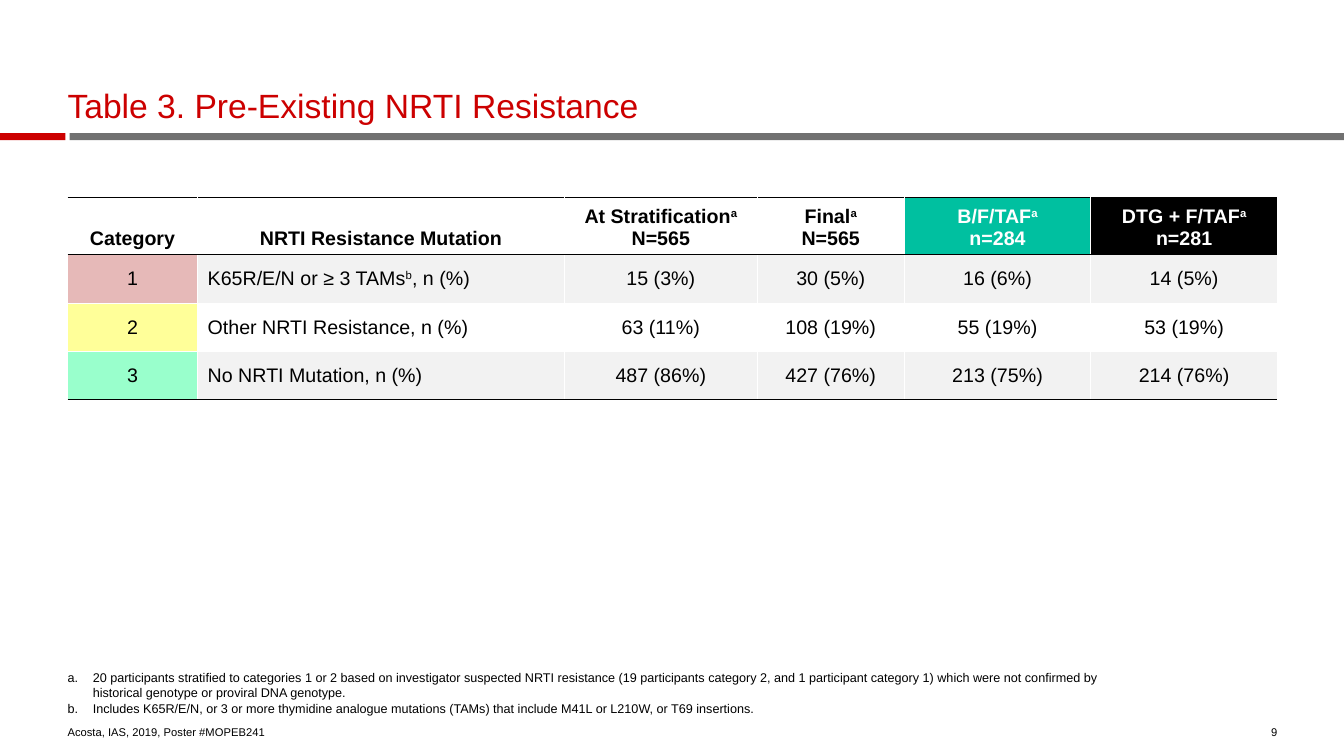
"""Build the slide with the table of pre-existing NRTI resistance."""
from dataclasses import dataclass

from lxml import etree
from pptx import Presentation
from pptx.dml.color import RGBColor
from pptx.enum.shapes import MSO_SHAPE
from pptx.enum.text import MSO_ANCHOR, PP_ALIGN
from pptx.oxml.ns import qn
from pptx.util import Inches, Pt

RECTANGLE = MSO_SHAPE.RECTANGLE
LEFT, CENTER, RIGHT = PP_ALIGN.LEFT, PP_ALIGN.CENTER, PP_ALIGN.RIGHT
BOTTOM, MIDDLE = MSO_ANCHOR.BOTTOM, MSO_ANCHOR.MIDDLE
FONT = "Arial"
COLORS = {
    "black": "000000", "white": "FFFFFF", "red": "CC0000", "gray": "717171",
    "teal": "00C0A0", "band": "F2F2F2",
    "pink": "E6B9B8", "yellow": "FFFF99", "mint": "99FFCC",
}


@dataclass(frozen=True)
class Bar:
    left: float
    width: float
    color: str


@dataclass(frozen=True)
class Label:
    text: str
    left: float
    top: float
    width: float
    height: float
    size: float
    color: str = "black"
    align: PP_ALIGN = LEFT
    spacing: float = 1.0
    numbered: bool = False


@dataclass(frozen=True)
class Column:
    heading: str
    width: float
    fill: str = "white"
    color: str = "black"
    align: PP_ALIGN = CENTER
    inset: float = 0.1


@dataclass(frozen=True)
class Category:
    fill: str
    band: str
    values: tuple[str, ...]


BARS = (Bar(0.69, 12.65, "gray"), Bar(0, 0.65, "red"))
FOOTNOTES = (
    "20 participants stratified to categories 1 or 2 based on investigator suspected NRTI "
    "resistance (19 participants category 2, and 1 participant category 1) which were not "
    "confirmed by historical genotype or proviral DNA genotype.\n"
    "Includes K65R/E/N, or 3 or more thymidine analogue mutations (TAMs) that include "
    "M41L or L210W, or T69 insertions."
)
LABELS = (
    Label("Table 3. Pre-Existing NRTI Resistance", 0.67, 0.51, 12, 0.74, 24, "red", spacing=0.9),
    Label("Acosta, IAS, 2019, Poster #MOPEB241", 0.67, 7.15, 4.44, 0.18, 8),
    Label("9", 12.31, 7.15, 0.36, 0.18, 8, align=RIGHT),
    Label(FOOTNOTES, 0.67, 6.65, 10.38, 0.45, 9, numbered=True),
)
COLUMNS = (
    Column("Category", 1.29),
    Column("NRTI Resistance Mutation", 3.64, align=LEFT),
    Column("At Stratification^a^\nN=565", 1.91),
    Column("Final^a^\nN=565", 1.46),
    Column("B/F/TAF^a^\nn=284", 1.85, "teal", "white", inset=0.15),
    Column("DTG + F/TAF^a^\nn=281", 1.85, "black", "white", inset=0.15),
)
CATEGORIES = (
    Category("pink", "band", ("1", "K65R/E/N or ≥ 3 TAMs^b^, n (%)",
                              "15 (3%)", "30 (5%)", "16 (6%)", "14 (5%)")),
    Category("yellow", "white", ("2", "Other NRTI Resistance, n (%)",
                                 "63 (11%)", "108 (19%)", "55 (19%)", "53 (19%)")),
    Category("mint", "band", ("3", "No NRTI Mutation, n (%)",
                              "487 (86%)", "427 (76%)", "213 (75%)", "214 (76%)")),
)
TABLE_LEFT, TABLE_TOP = 0.67, 1.96
HEADER_HEIGHT, ROW_HEIGHT = 0.56, 0.48


def rgb(name: str) -> RGBColor:
    return RGBColor.from_string(COLORS[name])


def write(frame, text: str, *, size: float, color: str = "black", bold: bool = False,
          align: PP_ALIGN = LEFT, spacing: float = 1.0, numbered: bool = False) -> None:
    """Fill a frame, one paragraph a line; text between carets is superscript."""
    for index, line in enumerate(text.split("\n")):
        para = frame.paragraphs[0] if index == 0 else frame.add_paragraph()
        para.alignment = align
        para.line_spacing = spacing
        if numbered:
            properties = para._p.get_or_add_pPr()
            properties.set("marL", str(Inches(0.25)))
            properties.set("indent", str(-Inches(0.25)))
            etree.SubElement(properties, qn("a:buAutoNum"), type="alphaLcPeriod")
        for position, piece in enumerate(line.split("^")):
            if not piece:
                continue
            span = para.add_run()
            span.text = piece
            span.font.name = FONT
            span.font.size = Pt(size)
            span.font.bold = bold
            span.font.color.rgb = rgb(color)
            if position % 2:
                span._r.get_or_add_rPr().set("baseline", "30000")


def draw_bar(page, bar: Bar) -> None:
    shape = page.shapes.add_shape(RECTANGLE, Inches(bar.left), Inches(1.32),
                                  Inches(bar.width), Inches(0.07))
    shape.shadow.inherit = False
    shape.fill.solid()
    shape.fill.fore_color.rgb = rgb(bar.color)
    shape.line.fill.background()


def draw_label(page, label: Label) -> None:
    box = page.shapes.add_textbox(Inches(label.left), Inches(label.top),
                                  Inches(label.width), Inches(label.height))
    frame = box.text_frame
    frame.word_wrap = True
    frame.vertical_anchor = BOTTOM
    frame.margin_left = frame.margin_right = frame.margin_top = frame.margin_bottom = 0
    write(frame, label.text, size=label.size, color=label.color, align=label.align,
          spacing=label.spacing, numbered=label.numbered)


def set_borders(cell, sides: dict[str, str]) -> None:
    properties = cell._tc.get_or_add_tcPr()
    for side in "LRTB":
        line = etree.SubElement(properties, qn(f"a:ln{side}"), w=str(Pt(1)))
        if side in sides:
            fill = etree.SubElement(line, qn("a:solidFill"))
            etree.SubElement(fill, qn("a:srgbClr"), val=COLORS[sides[side]])
        else:
            etree.SubElement(line, qn("a:noFill"))


def draw_table(page) -> None:
    last_row, last_column = len(CATEGORIES), len(COLUMNS) - 1
    heights = [HEADER_HEIGHT] + [ROW_HEIGHT] * last_row
    widths = [column.width for column in COLUMNS]
    table = page.shapes.add_table(len(heights), len(widths), Inches(TABLE_LEFT),
                                  Inches(TABLE_TOP), Inches(sum(widths)),
                                  Inches(sum(heights))).table
    table.first_row = table.horz_banding = False
    for row, height in enumerate(heights):
        table.rows[row].height = Inches(height)
        for index, column in enumerate(COLUMNS):
            table.columns[index].width = Inches(column.width)
            cell = table.cell(row, index)
            sides = {"T": "black" if row < 2 else "white",
                     "B": "black" if row in (0, last_row) else "white"}
            if index > 0:
                sides["L"] = "white"
            if index < last_column:
                sides["R"] = "white"
            set_borders(cell, sides)
            cell.margin_left = cell.margin_right = Inches(column.inset)
            cell.fill.solid()
            if row == 0:
                fill = column.fill
                cell.vertical_anchor = BOTTOM
                write(cell.text_frame, column.heading, size=14, color=column.color,
                      bold=True, align=CENTER)
            else:
                category = CATEGORIES[row - 1]
                fill = category.band if index else category.fill
                cell.vertical_anchor = MIDDLE
                write(cell.text_frame, category.values[index], size=14, align=column.align)
            cell.fill.fore_color.rgb = rgb(fill)


def main() -> None:
    deck = Presentation()
    deck.slide_width, deck.slide_height = Inches(13.33), Inches(7.5)
    page = deck.slides.add_slide(deck.slide_layouts[6])
    for bar in BARS:
        draw_bar(page, bar)
    for label in LABELS:
        draw_label(page, label)
    draw_table(page)
    deck.save("out.pptx")


if __name__ == "__main__":
    main()
